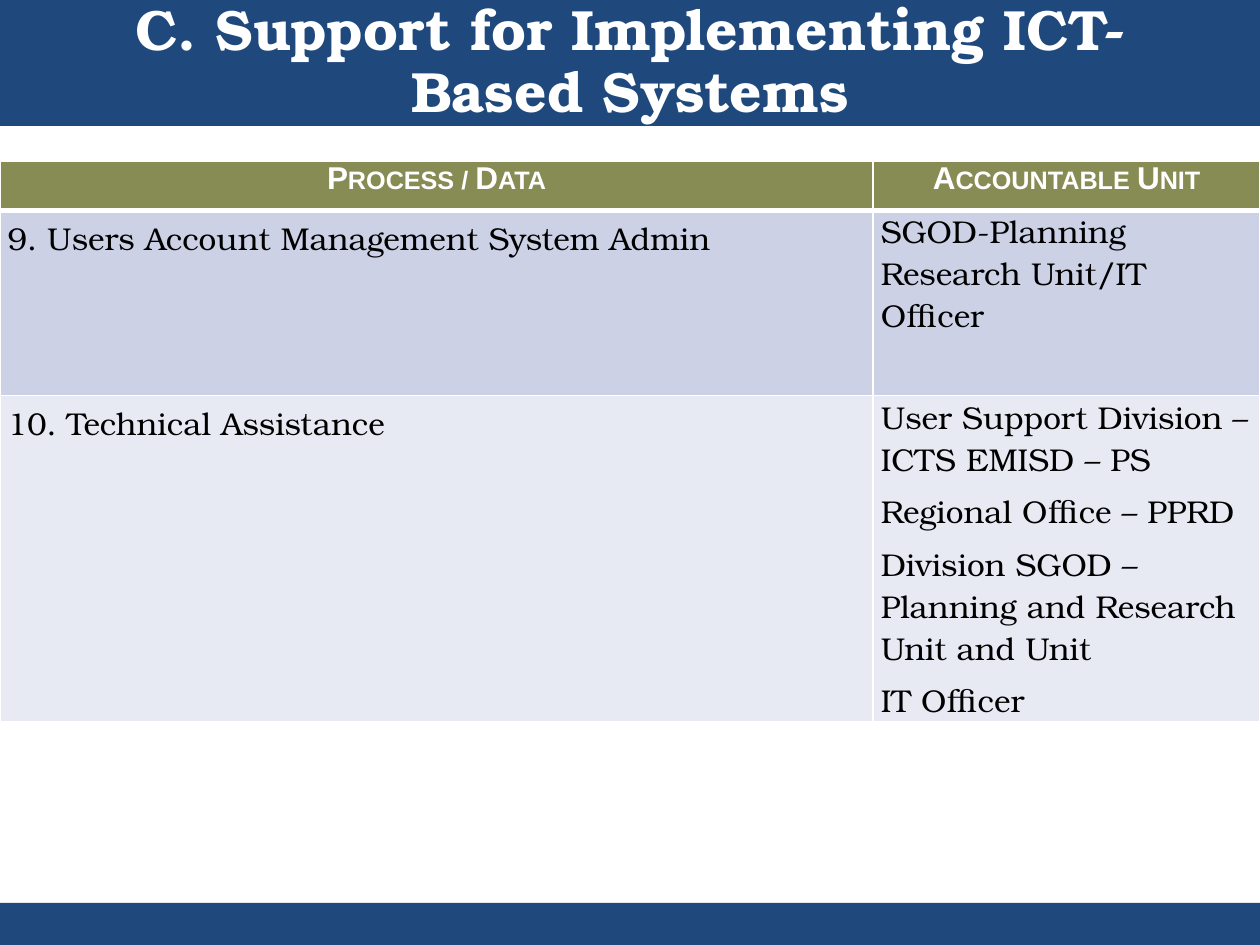
"""Build the slide on support for implementing ICT-based systems."""
from dataclasses import dataclass

from lxml import etree
from pptx import Presentation
from pptx.dml.color import RGBColor
from pptx.enum.shapes import MSO_SHAPE
from pptx.enum.text import MSO_ANCHOR, MSO_AUTO_SIZE, PP_ALIGN
from pptx.oxml.ns import qn
from pptx.slide import Slide
from pptx.table import _Cell
from pptx.util import Pt

RECTANGLE = MSO_SHAPE.RECTANGLE
MIDDLE = MSO_ANCHOR.MIDDLE
NO_AUTOFIT = MSO_AUTO_SIZE.NONE
LEFT = PP_ALIGN.LEFT
CENTER = PP_ALIGN.CENTER

NAVY = RGBColor(0x1F, 0x49, 0x7D)
OLIVE = RGBColor(0x86, 0x8C, 0x53)
LAVENDER = RGBColor(0xCC, 0xD1, 0xE6)
PALE = RGBColor(0xE7, 0xE9, 0xF3)
WHITE = RGBColor(0xFF, 0xFF, 0xFF)
BLACK = RGBColor(0, 0, 0)

SERIF = "TeX Gyre Bonum"
SANS = "Arial"
SLIDE_WIDTH = 720
SLIDE_HEIGHT = 540
COLUMN_WIDTHS = (499, 221)


@dataclass(frozen=True)
class Bar:
    top: float
    height: float


@dataclass(frozen=True)
class Row:
    height: float
    fill: RGBColor
    process: str
    units: tuple[str, ...]
    is_header: bool = False


BARS = (Bar(516, 24), Bar(0, 72))
ROWS = (
    Row(28, OLIVE, "Process / Data", ("Accountable Unit",), is_header=True),
    Row(106, LAVENDER, "9. Users Account Management System Admin",
        ("SGOD-Planning Research Unit/IT Officer",)),
    Row(28, PALE, "10. Technical Assistance",
        ("User Support Division – ICTS EMISD – PS",
         "Regional Office – PPRD",
         "Division SGOD – Planning and Research Unit and Unit",
         "IT Officer")),
)


def add_bar(slide: Slide, bar: Bar) -> None:
    shape = slide.shapes.add_shape(
        RECTANGLE, Pt(0), Pt(bar.top), Pt(SLIDE_WIDTH), Pt(bar.height))
    shape.shadow.inherit = False
    shape.fill.solid()
    shape.fill.fore_color.rgb = NAVY
    shape.line.fill.background()


def format_title(slide: Slide, text: str) -> None:
    title = slide.shapes.title
    title.left, title.top, title.width, title.height = Pt(36), Pt(0), Pt(648), Pt(72)
    frame = title.text_frame
    frame.text = text
    frame.word_wrap = True
    frame.auto_size = NO_AUTOFIT
    frame.vertical_anchor = MIDDLE
    paragraph = frame.paragraphs[0]
    paragraph.alignment = CENTER
    paragraph.line_spacing = 0.9
    font = paragraph.font
    font.name, font.size, font.bold = SERIF, Pt(32.4), True
    font.color.rgb = WHITE
    slide.shapes._spTree.append(title._element)


def set_borders(cell: _Cell, bottom_width: float) -> None:
    properties = cell._tc.get_or_add_tcPr()
    widths = {"a:lnL": 1, "a:lnR": 1, "a:lnT": 1, "a:lnB": bottom_width}
    for index, (tag, width) in enumerate(widths.items()):
        line = etree.Element(qn(tag), w=str(Pt(width)))
        fill = etree.SubElement(line, qn("a:solidFill"))
        etree.SubElement(fill, qn("a:srgbClr"), val=str(WHITE))
        properties.insert(index, line)


def fill_cell(cell: _Cell, row: Row, texts: tuple[str, ...], line_spacing: float) -> None:
    cell.margin_left = cell.margin_right = Pt(4.32)
    cell.margin_top = cell.margin_bottom = Pt(0)
    cell.fill.solid()
    cell.fill.fore_color.rgb = row.fill
    set_borders(cell, 3 if row.is_header else 1)
    cell.text_frame.text = "\n".join(texts)
    for paragraph in cell.text_frame.paragraphs:
        paragraph.alignment = CENTER if row.is_header else LEFT
        paragraph.line_spacing = 1.0 if row.is_header else line_spacing
        paragraph.space_after = Pt(6)
        font = paragraph.font
        font.name = SANS if row.is_header else SERIF
        font.size = Pt(18)
        font.bold = row.is_header
        font.color.rgb = WHITE if row.is_header else BLACK
        if row.is_header:
            paragraph._p.pPr.find(qn("a:defRPr")).set("cap", "small")


def add_unit_table(slide: Slide) -> None:
    table = slide.shapes.add_table(
        len(ROWS), len(COLUMN_WIDTHS), Pt(0), Pt(92.16), Pt(SLIDE_WIDTH),
        Pt(sum(row.height for row in ROWS))).table
    table.horz_banding = False
    for column, width in zip(table.columns, COLUMN_WIDTHS):
        column.width = Pt(width)
    for index, row in enumerate(ROWS):
        table.rows[index].height = Pt(row.height)
        fill_cell(table.cell(index, 0), row, (row.process,), 1.15)
        fill_cell(table.cell(index, 1), row, row.units, 1.0)


def main() -> None:
    presentation = Presentation()
    presentation.slide_width = Pt(SLIDE_WIDTH)
    presentation.slide_height = Pt(SLIDE_HEIGHT)
    slide = presentation.slides.add_slide(presentation.slide_layouts[5])
    for bar in BARS:
        add_bar(slide, bar)
    format_title(slide, "C. Support for Implementing ICT-Based Systems")
    add_unit_table(slide)
    presentation.save("out.pptx")


if __name__ == "__main__":
    main()
